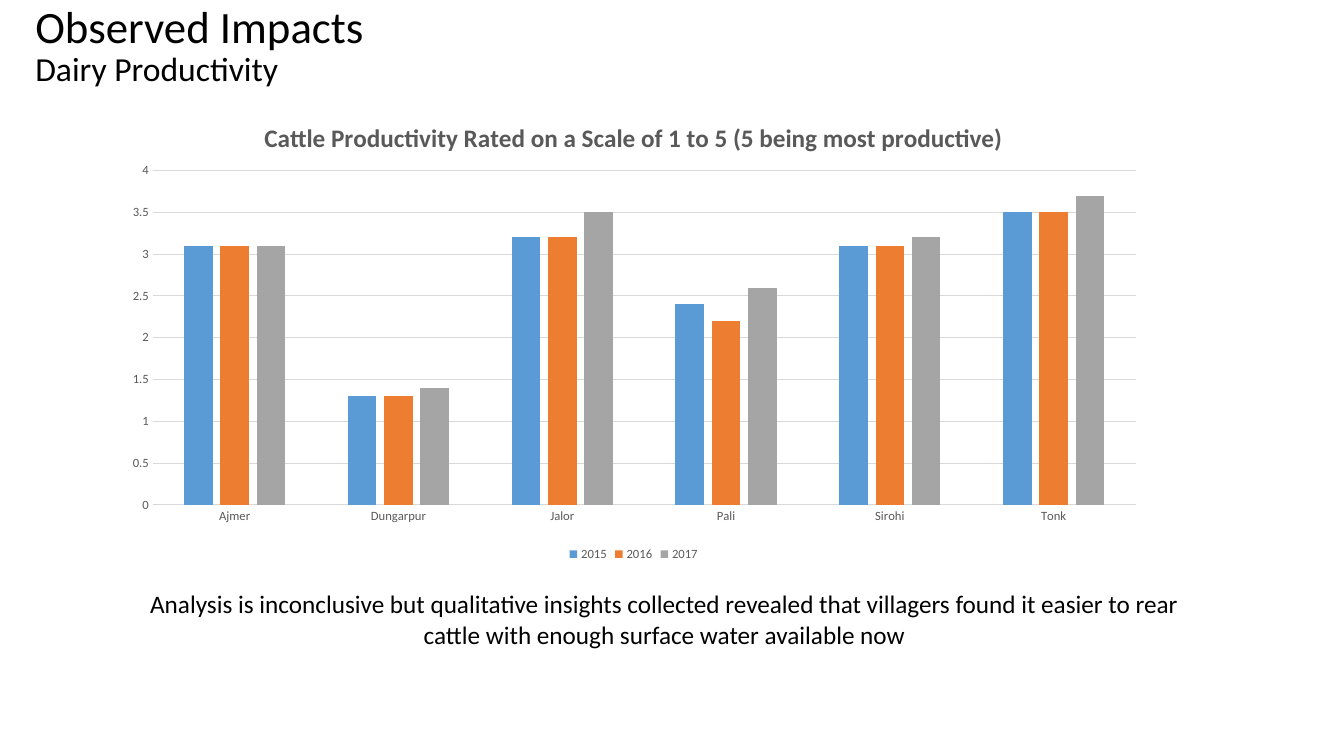
from lxml.etree import SubElement
from pptx import Presentation
from pptx.chart.data import CategoryChartData
from pptx.dml.color import RGBColor
from pptx.enum.chart import XL_CHART_TYPE, XL_LEGEND_POSITION, XL_TICK_MARK
from pptx.enum.text import MSO_ANCHOR, MSO_AUTO_SIZE, PP_ALIGN
from pptx.oxml.ns import qn
from pptx.util import Inches, Pt

HEADS = [("Observed Impacts", 32), ("Dairy Productivity", 24)]
NAME = "Cattle Productivity Rated on a Scale of 1 to 5 (5 being most productive)"
NOTE = ("Analysis is inconclusive but qualitative insights collected revealed that "
        "villagers found it easier to rear cattle with enough surface water available now")
TOWNS = ["Ajmer", "Dungarpur", "Jalor", "Pali", "Sirohi", "Tonk"]
BLACK = RGBColor(0x00, 0x00, 0x00)
GREY = RGBColor(0x59, 0x59, 0x59)
PALE = RGBColor(0xD9, 0xD9, 0xD9)
YEARS = [
    ("2015", [3.1, 1.3, 3.2, 2.4, 3.1, 3.5], RGBColor(0x5B, 0x9B, 0xD5)),
    ("2016", [3.1, 1.3, 3.2, 2.2, 3.1, 3.5], RGBColor(0xED, 0x7D, 0x31)),
    ("2017", [3.1, 1.4, 3.5, 2.6, 3.2, 3.7], RGBColor(0xA5, 0xA5, 0xA5)),
]
FONT = "Calibri"
PLOT = {"x": 0.04, "y": 0.15, "w": 0.94, "h": 0.72}


def style(font, size, color, bold=False):
    """Set the face, size, colour and weight of a font."""
    font.name, font.size, font.bold = FONT, Pt(size), bold
    font.color.rgb = color


def add_run(para, text, size, color=BLACK, bold=False):
    """Add one styled run to a paragraph."""
    run = para.add_run()
    run.text = text
    style(run.font, size, color, bold)


def place(shape, *box):
    """Move and size a shape in inches."""
    shape.left, shape.top, shape.width, shape.height = map(Inches, box)


def add_title(slide):
    """Fill the title with its two lines."""
    title = slide.shapes.title
    place(title, 0.25, 0.09, 12.89, 0.75)
    frame = title.text_frame
    frame.auto_size = MSO_AUTO_SIZE.NONE
    frame.vertical_anchor = MSO_ANCHOR.MIDDLE
    para = frame.paragraphs[0]
    para.alignment, para.line_spacing = PP_ALIGN.LEFT, 0.9
    for i, (text, size) in enumerate(HEADS):
        if i:
            para.add_line_break()
        add_run(para, text, size)


def fix_plot(chart):
    """Fix the inner plot area as shares of the chart."""
    area = chart.plots[0]._element.getparent()
    for old in area.findall(qn("c:layout")):
        area.remove(old)
    layout = SubElement(area, qn("c:layout"))
    area.insert(0, layout)
    manual = SubElement(layout, qn("c:manualLayout"))
    parts = [("layoutTarget", "inner"), ("xMode", "edge"), ("yMode", "edge")]
    for tag, val in parts + list(PLOT.items()):
        SubElement(manual, qn("c:" + tag)).set("val", str(val))


def add_graph(slide):
    """Draw the clustered columns by town and year."""
    data = CategoryChartData()
    data.categories = TOWNS
    for year, vals, _ in YEARS:
        data.add_series(year, vals)
    box = map(Inches, (1.1, 1, 10.37, 4.61))
    chart = slide.shapes.add_chart(XL_CHART_TYPE.COLUMN_CLUSTERED, *box, data).chart
    style(chart.font, 10, BLACK)
    chart.has_title = True
    add_run(chart.chart_title.text_frame.paragraphs[0], NAME, 18, GREY, True)
    chart.chart_title.include_in_layout = False
    chart.has_legend = True
    chart.legend.position = XL_LEGEND_POSITION.BOTTOM
    chart.legend.include_in_layout = False
    style(chart.legend.font, 9, GREY)
    plot = chart.plots[0]
    plot.gap_width, plot.overlap, plot.vary_by_categories = 219, -27, False
    for bar, (_, _, color) in zip(plot.series, YEARS):
        bar.format.fill.solid()
        bar.format.fill.fore_color.rgb = color
    towns, rates = chart.category_axis, chart.value_axis
    for axis in (towns, rates):
        axis.major_tick_mark = axis.minor_tick_mark = XL_TICK_MARK.NONE
        style(axis.tick_labels.font, 9, GREY)
    rates.minimum_scale, rates.maximum_scale, rates.major_unit = 0, 4, 0.5
    rates.tick_labels.number_format = "General"
    rates.tick_labels.number_format_is_linked = False
    rates.format.line.fill.background()
    rates.has_major_gridlines = True
    for line in (towns.format.line, rates.major_gridlines.format.line):
        line.color.rgb, line.width = PALE, Pt(0.75)
    fix_plot(chart)


def add_note(slide):
    """Write the finding below the chart."""
    box = map(Inches, (1.39, 5.79, 10.4, 0.71))
    frame = slide.shapes.add_textbox(*box).text_frame
    frame.word_wrap = True
    frame.auto_size = MSO_AUTO_SIZE.SHAPE_TO_FIT_TEXT
    para = frame.paragraphs[0]
    para.alignment = PP_ALIGN.CENTER
    add_run(para, NOTE, 18)


def main():
    """Build and save the slide."""
    deck = Presentation()
    deck.slide_width, deck.slide_height = Inches(13.33), Inches(7.5)
    slide = deck.slides.add_slide(deck.slide_layouts[5])
    add_title(slide)
    add_graph(slide)
    add_note(slide)
    deck.save("out.pptx")


if __name__ == "__main__":
    main()
